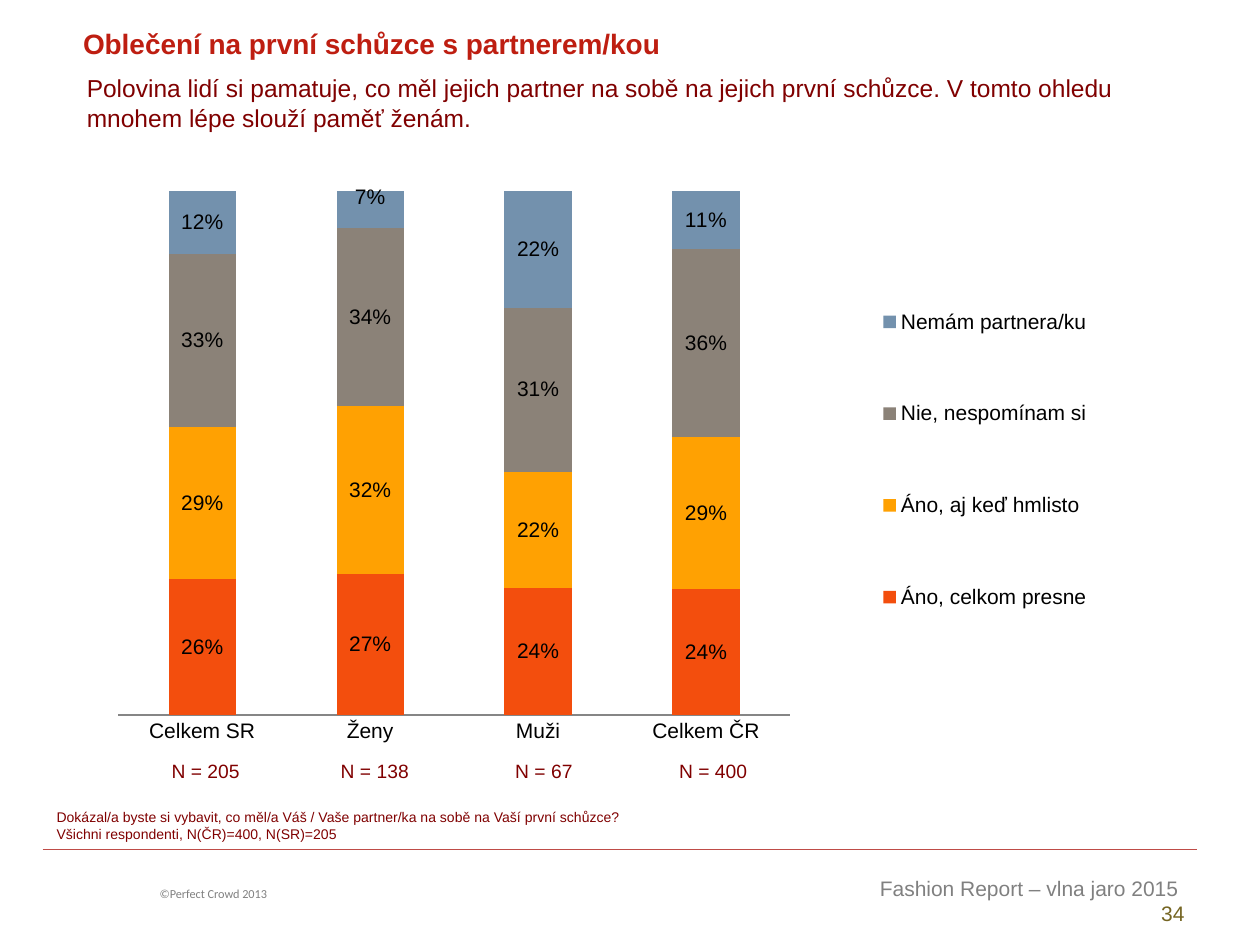
import lxml.etree
import pptx
import pptx.chart.data
import pptx.dml.color
import pptx.enum.chart
import pptx.enum.shapes
import pptx.enum.text
import pptx.oxml
import pptx.oxml.ns
import pptx.util

Cm = pptx.util.Cm
Pt = pptx.util.Pt
RGBColor = pptx.dml.color.RGBColor
qn = pptx.oxml.ns.qn
ALIGN = pptx.enum.text.PP_ALIGN
ANCHOR = pptx.enum.text.MSO_ANCHOR

BLACK = RGBColor(0x00, 0x00, 0x00)
GREY = RGBColor(0x80, 0x80, 0x80)
AXIS_GREY = RGBColor(0x86, 0x86, 0x86)
MAROON = RGBColor(0x80, 0x00, 0x00)
TITLE_RED = RGBColor(0xBE, 0x1E, 0x11)
RULE_RED = RGBColor(0xBF, 0x4C, 0x48)
OLIVE = RGBColor(0x75, 0x65, 0x22)
ORANGE = RGBColor(0xF3, 0x4E, 0x0D)
AMBER = RGBColor(0xFF, 0xA1, 0x02)
TAUPE = RGBColor(0x8B, 0x82, 0x78)
BLUE = RGBColor(0x73, 0x91, 0xAD)

PERCENT = '#,##0"%"'
GROUPS = {"Celkem SR": 205, "Ženy": 138, "Muži": 67, "Celkem ČR": 400}
ANSWERS = [
    ("Áno, celkom presne", (26, 27, 24, 24), ORANGE),
    ("Áno, aj keď hmlisto", (29, 32, 22, 29), AMBER),
    ("Nie, nespomínam si", (33, 34, 31, 36), TAUPE),
    ("Nemám partnera/ku", (12, 7, 22, 11), BLUE),
]


def assign(target, values):
    for key, value in values.items():
        setattr(target, key, value)


def manual_layout(values):
    layout = pptx.oxml.parse_xml(
        '<c:layout xmlns:c="http://schemas.openxmlformats.org/drawingml/2006/chart"/>')
    manual = lxml.etree.SubElement(layout, qn("c:manualLayout"))
    for key, value in values.items():
        lxml.etree.SubElement(manual, qn("c:" + key)).set("val", str(value))
    return layout


class SurveySlide:
    def __init__(self, deck):
        self.slide = deck.slides.add_slide(deck.slide_layouts[5])
        self.shapes = self.slide.shapes

    def style(self, font, size, color, name="Arial", bold=False):
        assign(font, {"name": name, "size": Pt(size), "bold": bold})
        font.color.rgb = color

    def fill_text(self, frame, lines, size, color, align=ALIGN.LEFT, **look):
        assign(frame, {"word_wrap": True, "auto_size": pptx.enum.text.MSO_AUTO_SIZE.NONE})
        for index, line in enumerate(lines):
            paragraph = frame.paragraphs[0] if index == 0 else frame.add_paragraph()
            paragraph.alignment = align
            run = paragraph.add_run()
            run.text = line
            self.style(run.font, size, color, **look)

    def title(self, box, text):
        heading = self.shapes.title
        assign(heading, dict(zip(("left", "top", "width", "height"), map(Cm, box))))
        heading.text_frame.vertical_anchor = ANCHOR.MIDDLE
        self.fill_text(heading.text_frame, [text], 16, TITLE_RED, bold=True)

    def text(self, box, lines, size, color, **look):
        frame = self.shapes.add_textbox(*map(Cm, box)).text_frame
        self.fill_text(frame, lines, size, color, **look)
        return frame

    def rule(self, left, right, top):
        line = self.shapes.add_connector(
            pptx.enum.shapes.MSO_CONNECTOR.STRAIGHT, Cm(left), Cm(top), Cm(right), Cm(top))
        line.line.color.rgb = RULE_RED
        line.line.width = Pt(0.75)
        lxml.etree.SubElement(line._element.spPr, qn("a:effectLst"))

    def chart(self, box, groups, answers):
        data = pptx.chart.data.CategoryChartData(number_format="0")
        data.categories = groups
        for name, shares, _ in answers:
            data.add_series(name, shares)
        chart = self.shapes.add_chart(
            pptx.enum.chart.XL_CHART_TYPE.COLUMN_STACKED_100, *map(Cm, box), data).chart
        assign(chart, {"has_title": False, "has_legend": True})
        self.style(chart.font, 12, BLACK)

        assign(chart.legend, {"position": pptx.enum.chart.XL_LEGEND_POSITION.RIGHT,
                              "include_in_layout": False})
        legend_layout = manual_layout({"xMode": "edge", "yMode": "edge",
                                       "x": 0.7, "y": 0.13, "w": 0.26, "h": 0.7})
        legend = chart.legend._element
        for layout in legend.findall(qn("c:layout")):
            legend.remove(layout)
        legend.find(qn("c:legendPos")).addnext(legend_layout)

        plot_area = chart._chartSpace.chart.plotArea
        for layout in plot_area.findall(qn("c:layout")):
            plot_area.remove(layout)
        plot_area.insert(0, manual_layout({
            "layoutTarget": "inner", "xMode": "edge", "yMode": "edge",
            "x": 0.03, "y": 0.05, "w": 0.62, "h": 0.84}))

        no_tick = pptx.enum.chart.XL_TICK_MARK.NONE
        assign(chart.category_axis, {"major_tick_mark": no_tick, "minor_tick_mark": no_tick})
        chart.category_axis.format.line.color.rgb = AXIS_GREY
        assign(chart.value_axis, {"visible": False, "has_major_gridlines": False})

        plot = chart.plots[0]
        assign(plot, {"gap_width": 150, "overlap": 100, "vary_by_categories": False})
        for series, (_, _, color) in zip(plot.series, answers):
            series.format.fill.solid()
            series.format.fill.fore_color.rgb = color
            labels = series.data_labels
            assign(labels, {"show_value": True, "number_format": PERCENT,
                            "number_format_is_linked": False})
            self.style(labels.font, 12, BLACK)
        self.raise_label(plot.series[len(answers) - 1], 1)

    def raise_label(self, series, index):
        label = series.points[index].data_label
        self.style(label.font, 12, BLACK)
        label.position = pptx.enum.chart.XL_LABEL_POSITION.CENTER
        anchor = series.data_labels._element.find(qn("c:dLbl")).find(qn("c:idx"))
        number_format = lxml.etree.Element(qn("c:numFmt"))
        number_format.set("formatCode", PERCENT)
        number_format.set("sourceLinked", "0")
        anchor.addnext(number_format)
        anchor.addnext(manual_layout({"x": 0, "y": -0.02}))

    def table(self, left, top, column, row, values):
        table = self.shapes.add_table(
            1, len(values), Cm(left), Cm(top), Cm(column * len(values)), Cm(row)).table
        assign(table, {"first_row": False, "horz_banding": False})
        for cell, value in zip(table.rows[0].cells, values):
            cell.fill.background()
            assign(cell, {"margin_left": 0, "margin_right": 0, "margin_top": 0,
                          "margin_bottom": 0, "vertical_anchor": ANCHOR.MIDDLE})
            paragraph = cell.text_frame.paragraphs[0]
            paragraph.alignment = ALIGN.CENTER
            run = paragraph.add_run()
            run.text = value
            self.style(run.font, 11, MAROON)


def main():
    deck = pptx.Presentation()
    assign(deck, {"slide_width": Cm(25.4), "slide_height": Cm(19.05)})
    page = SurveySlide(deck)
    page.rule(0.86, 24.13, 17.12)
    page.text((2.97, 17.75, 7.39, 0.56), ["©Perfect Crowd 2013"], 7, GREY, name="Calibri")
    footer = page.text((14.71, 17.53, 9.42, 1.27), ["Fashion Report – vlna jaro 2015 "],
                       12, GREY, align=ALIGN.RIGHT)
    footer.paragraphs[0].add_line_break()
    page_number = footer.paragraphs[0].add_run()
    page_number.text = "34"
    page.style(page_number.font, 12, OLIVE)

    page.title((1.42, 0.41, 19.08, 0.94), "Oblečení na první schůzce s partnerem/kou")
    page.text((0.89, 16.18, 23.01, 0.94), [
        "Dokázal/a byste si vybavit, co měl/a Váš / Vaše partner/ka na sobě na Vaší první schůzce?",
        "Všichni respondenti, N(ČR)=400, N(SR)=205"], 8, MAROON)
    page.text((1.5, 1.35, 22.81, 2.06), [
        "Polovina lidí si pamatuje, co měl jejich partner na sobě na jejich první schůzce. "
        "V tomto ohledu mnohem lépe slouží paměť ženám."], 14, MAROON)
    page.chart((1.73, 3.23, 21.84, 12.57), list(GROUPS), ANSWERS)
    page.table(2.44, 15.29, 3.41, 0.53, [f"N = {count}" for count in GROUPS.values()])
    deck.save("out.pptx")


if __name__ == "__main__":
    main()
